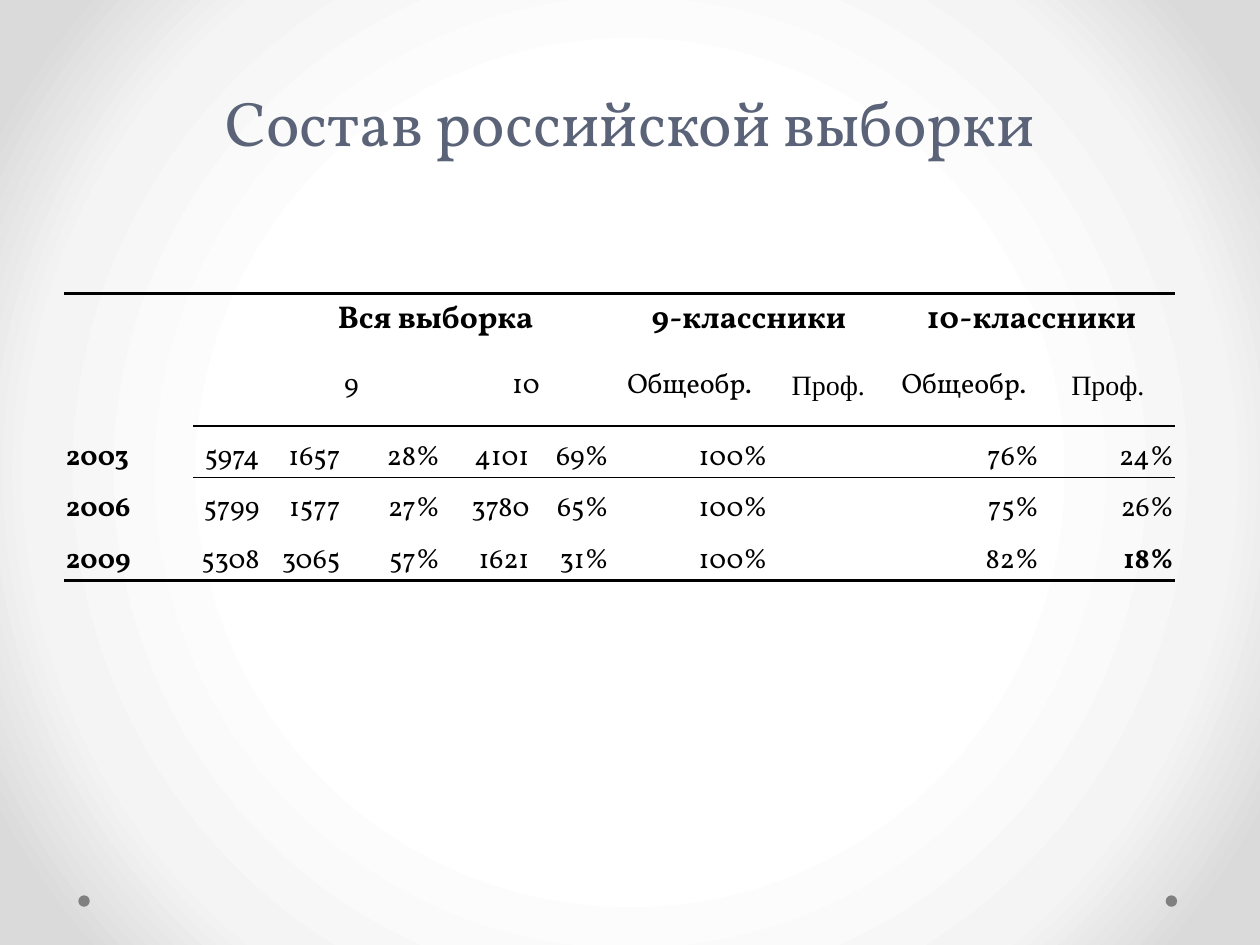
from pptx import Presentation
from pptx.dml.color import RGBColor
from pptx.enum.shapes import MSO_SHAPE
from pptx.enum.text import MSO_ANCHOR, PP_ALIGN
from pptx.oxml import parse_xml
from pptx.oxml.ns import nsdecls
from pptx.util import Cm, Pt

LEFT, MID, RIGHT = PP_ALIGN.LEFT, PP_ALIGN.CENTER, PP_ALIGN.RIGHT
CENTRE, BASE = MSO_ANCHOR.MIDDLE, MSO_ANCHOR.BOTTOM
OVAL = MSO_SHAPE.OVAL
SERIF, TIMES = "Vollkorn", "Times New Roman"
PLAIN = "{2D5ABB26-0587-4C30-8999-92F81FD0307C}"
COLORS = {"title": "5A6378", "ink": "000000", "dot": "808080"}
GLOW = [(0, "FFFFFF"), (50, "FFFFFF"), (76, "F4F4F4"), (92, "DADADA"), (100, "DADADA")]

WIDTHS = [2.59, 1.37, 1.63, 2.01, 1.8, 1.6, 3.2, 2.39, 3.08, 2.72]
HEIGHTS = [1.04, 1.63, 1.04, 1.04, 1.04]
GROUPS = [(2, 4, "Вся выборка"), (6, 2, "9-классники"), (8, 2, "10-классники")]
GRADES = [(2, 2, "9"), (4, 2, "10")]
KINDS = [(6, "Общеобр.", SERIF), (7, "Проф.", TIMES), (8, "Общеобр.", SERIF), (9, "Проф.", TIMES)]
DATA = [
    ["2003", "5974", "1657", "28%", "4101", "69%", "100%", "", "76%", "24%"],
    ["2006", "5799", "1577", "27%", "3780", "65%", "100%", "", "75%", "26%"],
    ["2009", "5308", "3065", "57%", "1621", "31%", "100%", "", "82%", "18%"],
]


def write(frame, text, size=16, color="ink", font=SERIF, bold=False, align=MID, space=None):
    """Put one formatted paragraph into a text frame."""
    para = frame.paragraphs[0]
    para.alignment = align
    para.line_spacing = space
    run = para.add_run()
    run.text = text
    run.font.size = Pt(size)
    run.font.name = font
    run.font.bold = bold
    run.font.color.rgb = RGBColor.from_string(COLORS[color])


def rule(cell, side, width):
    """Draw a line on one side of a cell."""
    cell._tc.get_or_add_tcPr().append(parse_xml(
        f'<a:ln{side} {nsdecls("a")} w="{Pt(width)}"><a:solidFill>'
        f'<a:srgbClr val="{COLORS["ink"]}"/></a:solidFill></a:ln{side}>'))


def add_glow(slide):
    """Fill the background with a round gradient."""
    stops = "".join(f'<a:gs pos="{at * 1000}"><a:srgbClr val="{tone}"/></a:gs>' for at, tone in GLOW)
    slide.element.cSld.insert(0, parse_xml(
        f'<p:bg {nsdecls("p", "a")}><p:bgPr><a:gradFill rotWithShape="1"><a:gsLst>{stops}</a:gsLst>'
        '<a:path path="circle"><a:fillToRect l="50000" t="50000" r="50000" b="50000"/></a:path>'
        '</a:gradFill><a:effectLst/></p:bgPr></p:bg>'))


def add_dots(slide, x, y, gap, size):
    """Place a pair of small dots near the foot of the slide."""
    for left in (x, x + gap):
        dot = slide.shapes.add_shape(OVAL, Cm(left), Cm(y), Cm(size), Cm(size))
        dot.shadow.inherit = False
        dot.fill.solid()
        dot.fill.fore_color.rgb = RGBColor.from_string(COLORS["dot"])
        dot.line.fill.background()


def add_title(slide, x, y, w, h):
    """Place the title at the foot of its box."""
    frame = slide.shapes.add_textbox(Cm(x), Cm(y), Cm(w), Cm(h)).text_frame
    frame.word_wrap = True
    frame.vertical_anchor = BASE
    write(frame, "Состав российской выборки", size=36, color="title", space=Pt(58))


def add_grid(slide, x, y, w, h):
    """Place the sample table, scaled to its box."""
    grid = slide.shapes.add_table(len(HEIGHTS), len(WIDTHS), Cm(x), Cm(y), Cm(w), Cm(h)).table
    grid.first_row = grid.horz_banding = False
    grid._tbl.tblPr[0].text = PLAIN
    for col, width in zip(grid.columns, WIDTHS):
        col.width = Cm(width * w / sum(WIDTHS))
    for row, height in zip(grid.rows, HEIGHTS):
        row.height = Cm(height * h / sum(HEIGHTS))
    last = len(HEIGHTS) - 1
    for r in range(last + 1):
        for c in range(len(WIDTHS)):
            cell = grid.cell(r, c)
            cell.margin_left = cell.margin_right = cell.margin_top = Cm(0.03)
            cell.margin_bottom = 0
            cell.vertical_anchor = CENTRE if r < 2 else BASE
            if r == 0:
                rule(cell, "T", 2)
            if r == last:
                rule(cell, "B", 2)
            if r in (1, 2) and c:
                rule(cell, "B", 1)
            cell.fill.background()
    for r, spans in enumerate([GROUPS, GRADES]):
        for c, span, text in spans:
            grid.cell(r, c).merge(grid.cell(r, c + span - 1))
            write(grid.cell(r, c).text_frame, text, size=16 if r else 18, bold=r == 0)
    for c, text, font in KINDS:
        write(grid.cell(1, c).text_frame, text, font=font)
    for r, line in enumerate(DATA, 2):
        for c, text in enumerate(line):
            if text:
                write(grid.cell(r, c).text_frame, text, align=RIGHT if c else LEFT,
                      bold=c == 0 or text == "18%")


def main():
    """Build the slide and save it."""
    deck = Presentation()
    deck.slide_width, deck.slide_height = Cm(25.4), Cm(19.05)
    slide = deck.slides.add_slide(deck.slide_layouts[6])
    add_glow(slide)
    add_dots(slide, 1.58, 18.05, 21.92, 0.23)
    add_title(slide, 1.27, 0, 22.86, 3.33)
    add_grid(slide, 1.3, 5.92, 22.4, 5.79)
    deck.save("out.pptx")


if __name__ == "__main__":
    main()
